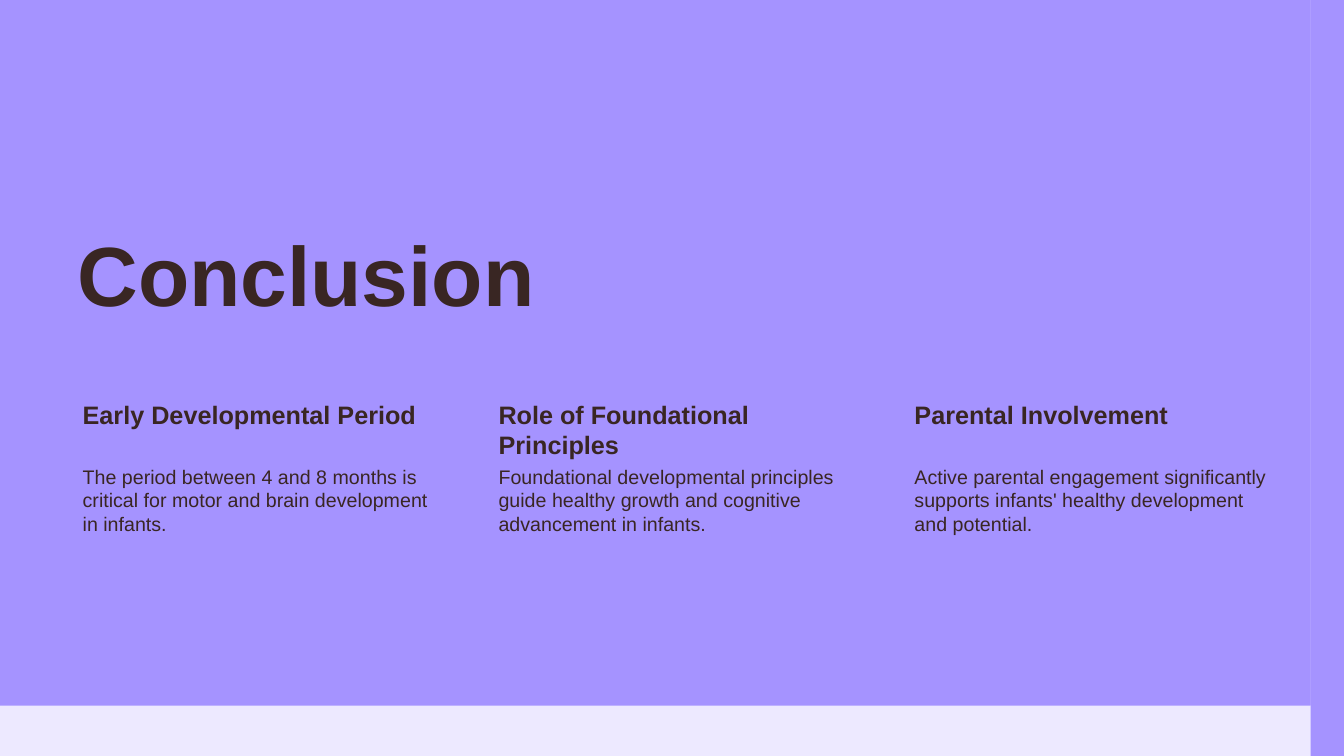
from pptx import Presentation
from pptx.dml.color import RGBColor
from pptx.enum import text
from pptx.util import Inches, Pt

INK, LILAC, PALE = "392623", "A593FF", "EDE9FF"
WIDTH, HEIGHT, BORDER = 13.33, 7.5, 0.24


def paint(fill, color):
    fill.solid()
    fill.fore_color.rgb = RGBColor.from_string(color)


def add_text(wording, box, insets, size, bold):
    frame = slide.shapes.add_textbox(*map(Inches, box)).text_frame
    left, rest = insets
    margins = {"margin_left": left, "margin_top": rest[0],
               "margin_right": rest[1], "margin_bottom": rest[0]}
    for name, value in margins.items():
        setattr(frame, name, Inches(value))
    frame.word_wrap = True
    paragraph = frame.paragraphs[0]
    run = paragraph.add_run()
    run.text = wording
    for name, value in {"name": "Arial", "size": Pt(size), "bold": bold}.items():
        setattr(run.font, name, value)
    paint(run.font.fill, INK)
    return frame


deck = Presentation()
deck.slide_width, deck.slide_height = Inches(WIDTH), Inches(HEIGHT)
slide = deck.slides.add_slide(deck.slide_layouts[6])
paint(slide.background.fill, LILAC)

# Pale border: outer edge clockwise, opening counter-clockwise
right, bottom = WIDTH - BORDER, HEIGHT - BORDER
outline = slide.shapes.build_freeform(0, 0, scale=Inches(1))
outline.add_line_segments([(WIDTH, 0), (WIDTH, HEIGHT), (0, HEIGHT)])
outline.move_to(BORDER, BORDER)
outline.add_line_segments([(BORDER, bottom), (right, bottom), (right, BORDER)])
border = outline.convert_to_shape()
border.shadow.inherit = False
paint(border.fill, PALE)
border.line.fill.background()

# Title
title = add_text("Conclusion", (0.67, 2.02, 8.03, 1.24), (0.1, (0.05, 0.1)), 60, True)
title.vertical_anchor = text.MSO_ANCHOR.BOTTOM
title.paragraphs[0].line_spacing = 0.85

# Three takeaways in equal columns
takeaways = [
    ("Early Developmental Period",
     "The period between 4 and 8 months is critical for motor and brain "
     "development in infants."),
    ("Role of Foundational Principles",
     "Foundational developmental principles guide healthy growth and cognitive "
     "advancement in infants."),
    ("Parental Involvement",
     "Active parental engagement significantly supports infants' healthy "
     "development and potential."),
]
for column, (heading, detail) in enumerate(takeaways):
    x = 0.67 + column * 4.125
    add_text(heading, (x, 3.93, 3.75, 0.66), (0.15, (0.03, 0.03)), 18, True)
    add_text(detail, (x, 4.59, 3.75, 2.33), (0.15, (0.02, 0.02)), 14, False)

deck.save("out.pptx")
